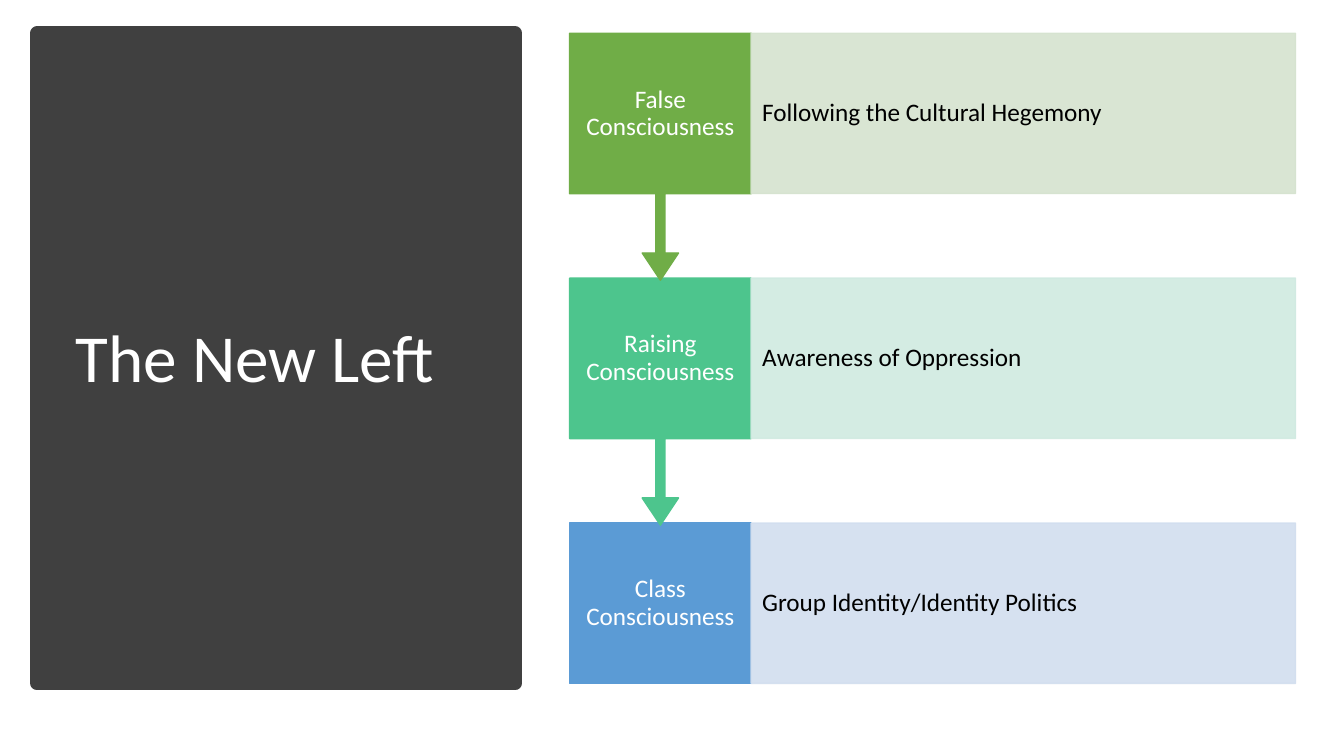
from lxml import etree
from pptx import Presentation
from pptx.dml.color import RGBColor
from pptx.enum.shapes import MSO_SHAPE
from pptx.enum.text import MSO_ANCHOR, PP_ALIGN
from pptx.oxml.ns import qn
from pptx.util import Inches, Pt

RECTANGLE = MSO_SHAPE.RECTANGLE
ARROW_BOX = MSO_SHAPE.DOWN_ARROW_CALLOUT
MIDDLE = MSO_ANCHOR.MIDDLE
LEFT, CENTER = PP_ALIGN.LEFT, PP_ALIGN.CENTER

FONT = "Calibri"
COLORS = {
    "panel": "404040", "white": "FFFFFF", "black": "000000",
    "green": "70AD47", "pale green": "D5E3CF",
    "teal": "4DC58D", "pale teal": "D0EAE1",
    "blue": "5B9BD5", "pale blue": "D2DEEF",
}
STAGES = [
    ("False Consciousness", "Following the Cultural Hegemony", "green"),
    ("Raising Consciousness", "Awareness of Oppression", "teal"),
    ("Class Consciousness", "Group Identity/Identity Politics", "blue"),
]
STAGE_LEFT, STAGE_TOP, STAGE_STEP = 5.65, 0.33, 2.43
STAGE_WIDTH, STAGE_HEIGHT, ARROW_BOX_HEIGHT = 1.8, 1.59, 2.45
DETAIL_WIDTH = 5.4


def rgb(name):
    """Return the named colour."""
    return RGBColor.from_string(COLORS[name])


def add_block(slide, kind, left, top, width, height, color, line_width=1):
    """Add a filled shape outlined in its own colour."""
    block = slide.shapes.add_shape(
        kind, Inches(left), Inches(top), Inches(width), Inches(height))
    block.shadow.inherit = False
    block.fill.solid()
    block.fill.fore_color.rgb = rgb(color)
    block.line.color.rgb = rgb(color)
    block.line.width = Pt(line_width)
    return block


def make_translucent(block, percent):
    """Set the opacity of a block's fill and outline."""
    for color in block._element.spPr.iter(qn("a:srgbClr")):
        etree.SubElement(color, qn("a:alpha"), val=str(percent * 1000))


def write(block, text, size, color, align, inset_x, inset_y):
    """Write vertically centred text in a block."""
    frame = block.text_frame
    frame.text = text
    frame.word_wrap = True
    frame.vertical_anchor = MIDDLE
    frame.margin_left = frame.margin_right = Inches(inset_x)
    frame.margin_top = frame.margin_bottom = Inches(inset_y)
    paragraph = frame.paragraphs[0]
    paragraph.alignment = align
    paragraph.line_spacing = 0.9
    font = paragraph.runs[0].font
    font.name, font.size = FONT, Pt(size)
    font.color.rgb = rgb(color)


def add_title(slide, text):
    """Add the dark panel and the slide title on it."""
    add_block(slide, RECTANGLE, 0.37, 0.33, 4.74, 6.45, "panel", 10)
    title = slide.shapes.add_textbox(
        Inches(0.65), Inches(0.7), Inches(4.16), Inches(5.75))
    write(title, text, 48, "white", LEFT, 0.1, 0.05)


def add_stage(slide, index, name, detail, color):
    """Add one stage with its detail bar, and an arrow unless it is last."""
    top = STAGE_TOP + index * STAGE_STEP
    if index == len(STAGES) - 1:
        stage = add_block(slide, RECTANGLE, STAGE_LEFT, top,
                          STAGE_WIDTH, STAGE_HEIGHT, color)
    else:
        stage = add_block(slide, ARROW_BOX, STAGE_LEFT, top,
                          STAGE_WIDTH, ARROW_BOX_HEIGHT, color)
        for position, value in enumerate((0.05, 0.1, 0.15, 0.65)):
            stage.adjustments[position] = value
    write(stage, name, 18, "white", CENTER, 0.13, 0.14)
    bar = add_block(slide, RECTANGLE, STAGE_LEFT + STAGE_WIDTH, top,
                    DETAIL_WIDTH, STAGE_HEIGHT, f"pale {color}")
    make_translucent(bar, 90)
    write(bar, detail, 18, "black", LEFT, 0.11, 0.25)


def main():
    """Build and save the slide."""
    deck = Presentation()
    deck.slide_width, deck.slide_height = Inches(13.33), Inches(7.5)
    slide = deck.slides.add_slide(deck.slide_layouts[6])
    add_title(slide, "The New Left")
    for index, stage in reversed(list(enumerate(STAGES))):
        add_stage(slide, index, *stage)
    deck.save("out.pptx")


if __name__ == "__main__":
    main()
